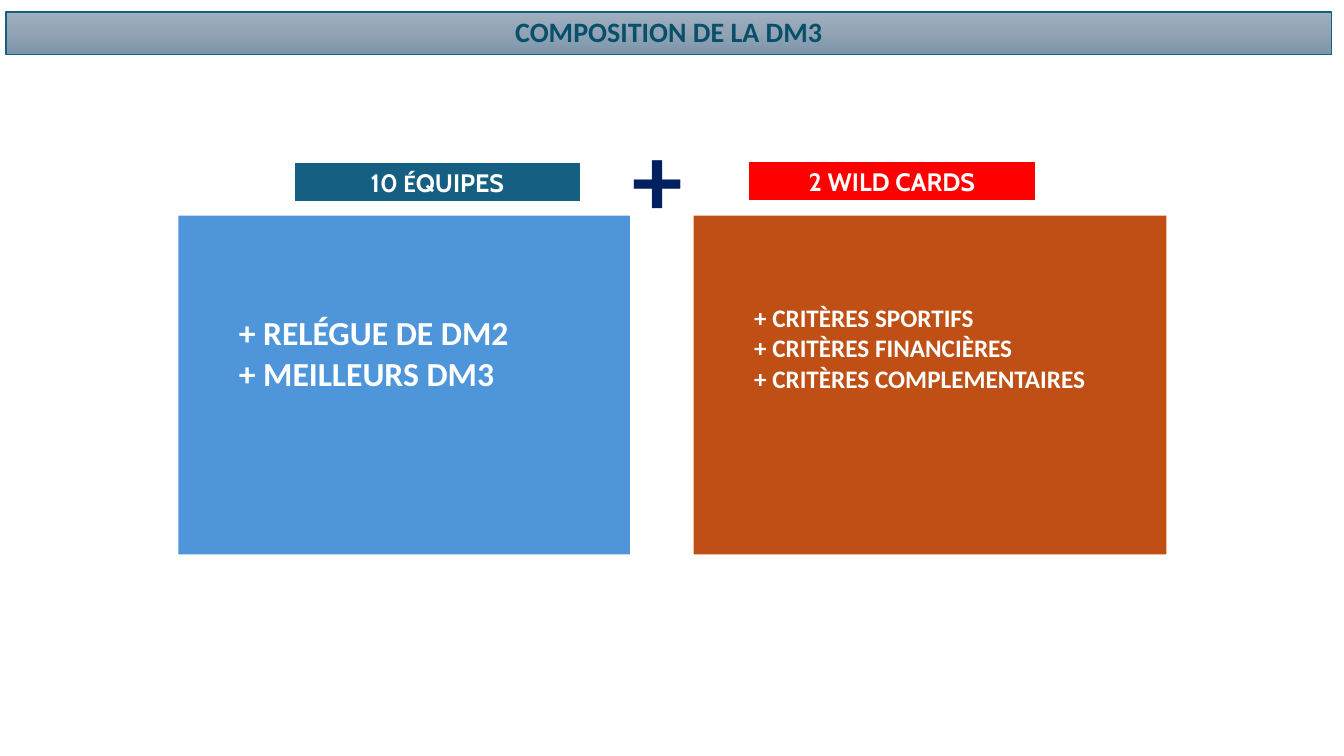
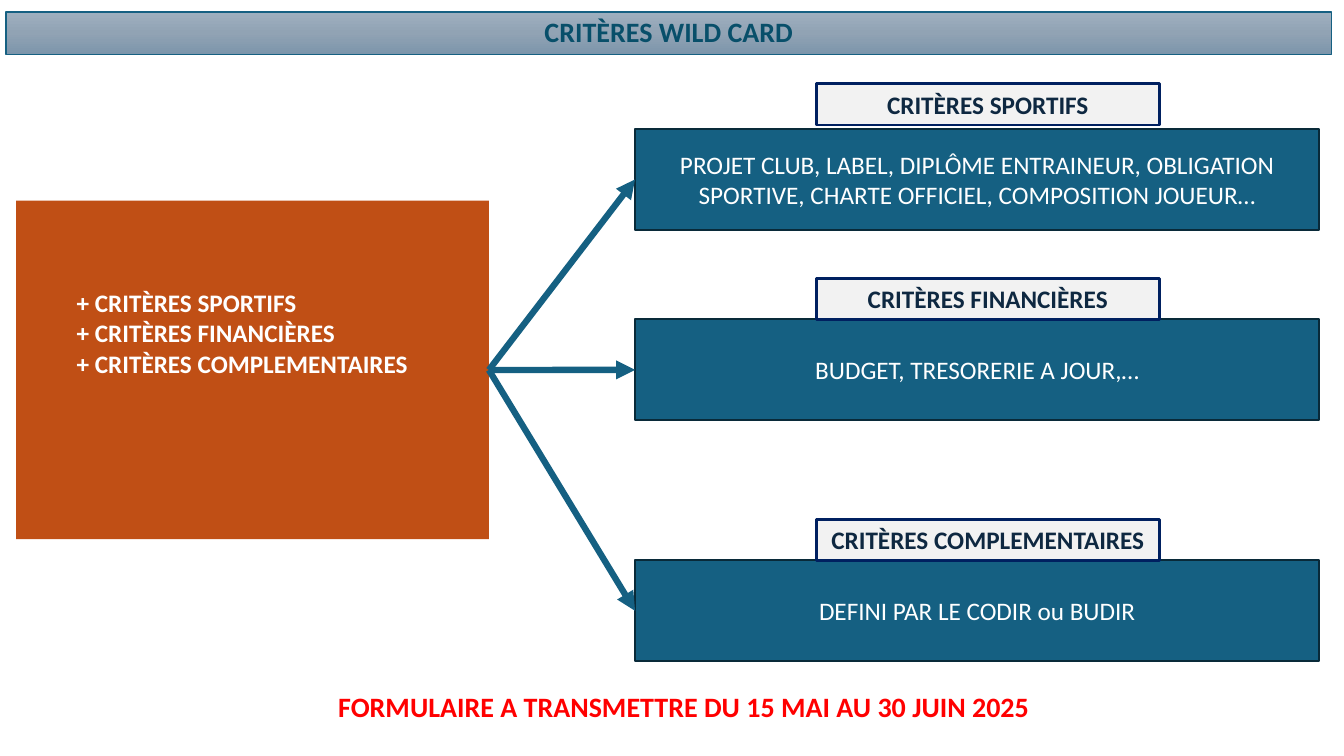
from copy import deepcopy
from dataclasses import dataclass

from lxml import etree
from pptx import Presentation
from pptx.dml.color import RGBColor
from pptx.enum import shapes, text
from pptx.oxml import ns
from pptx.util import Pt

COLORS = {
    "white": "FFFFFF",
    "teal": "156082",
    "teal_dark": "092A39",
    "title": "084F6A",
    "navy": "002060",
    "ink": "0E2841",
    "red": "FF0000",
    "blue": "4E95D9",
    "orange": "C04F15",
    "pale": "F2F2F2",
}
BAND_STOPS = ((0, "9EAFBF"), (0.5, "91A3B4"), (1, "7C95AB"))
CRITERIA = ("CRITÈRES SPORTIFS", "CRITÈRES FINANCIÈRES", "CRITÈRES COMPLEMENTAIRES")
CENTER = text.PP_ALIGN.CENTER
LEFT = text.PP_ALIGN.LEFT


@dataclass(frozen=True)
class Area:
    left: float
    top: float
    width: float
    height: float

    def lengths(self):
        return Pt(self.left), Pt(self.top), Pt(self.width), Pt(self.height)


@dataclass(frozen=True)
class Style:
    size: float = 18
    color: str = "white"
    bold: bool = True
    font: str = "Calibri"
    align: text.PP_ALIGN = CENTER
    spacing: float = 1.0


@dataclass(frozen=True)
class Look:
    fill: str
    line: str | None = None
    weight: float = 0


@dataclass(frozen=True)
class Label:
    area: Area
    look: Look
    spans: tuple[tuple[str, str], ...]


@dataclass(frozen=True)
class Criterion:
    heading: str
    detail: str
    heading_top: float
    detail_top: float


HEADLINE = Style(20, "title", spacing=0.9)
NOTICE = Style(20, "red", spacing=0.9)
PLUS = Style(72, "navy", align=LEFT, spacing=0.9)
HEADING = Style(color="ink")
DETAIL = Style(bold=False)

HEADING_LOOK = Look("pale", "navy", 2)
DETAIL_LOOK = Look("teal", "teal_dark", 1.5)

TEAM_LABELS = (
    Label(Area(209.5, 115.2, 205.9, 29.5), Look("teal", "white", 2),
          (("10 ", "Cabin"), ("É", "Calibri"), ("QUIPES", "Cabin"))),
    Label(Area(534.2, 114.5, 205.9, 29.5), Look("red", "white", 2),
          (("2 WILD CARDS", "Cabin"),)),
)
DETAILS = (
    Criterion(CRITERIA[0],
              "PROJET CLUB, LABEL, DIPLÔME ENTRAINEUR, OBLIGATION SPORTIVE, "
              "CHARTE OFFICIEL, COMPOSITION JOUEUR…", 59.8, 92.2),
    Criterion(CRITERIA[1], "BUDGET, TRESORERIE A JOUR,…", 198.7, 228.2),
    Criterion(CRITERIA[2], "DEFINI PAR LE CODIR ou BUDIR", 370.8, 400.3),
)


def rgb(name: str) -> RGBColor:
    return RGBColor.from_string(COLORS[name])


def add_span(para, words: str, style: Style, font: str | None = None) -> None:
    span = para.add_run()
    span.text = words
    span.font.name = font or style.font
    span.font.size = Pt(style.size)
    span.font.bold = style.bold
    span.font.color.rgb = rgb(style.color)


def format_para(para, style: Style) -> None:
    para.alignment = style.align
    para.line_spacing = style.spacing


def write(box, lines: tuple[str, ...], style: Style) -> None:
    frame = box.text_frame
    frame.word_wrap = True
    frame.auto_size = text.MSO_AUTO_SIZE.NONE
    frame.vertical_anchor = text.MSO_ANCHOR.MIDDLE
    for index, line in enumerate(lines):
        para = frame.add_paragraph() if index else frame.paragraphs[0]
        format_para(para, style)
        add_span(para, line, style)


def add_box(page, area: Area, look: Look):
    box = page.shapes.add_shape(shapes.MSO_SHAPE.RECTANGLE, *area.lengths())
    box.shadow.inherit = False
    box.fill.solid()
    box.fill.fore_color.rgb = rgb(look.fill)
    if look.line:
        box.line.color.rgb = rgb(look.line)
        box.line.width = Pt(look.weight)
    else:
        box.line.fill.background()
    return box


def add_label(page, label: Label) -> None:
    box = add_box(page, label.area, label.look)
    box.text_frame.vertical_anchor = text.MSO_ANCHOR.MIDDLE
    para = box.text_frame.paragraphs[0]
    style = Style()
    format_para(para, style)
    for words, font in label.spans:
        add_span(para, words, style, font)


def add_list(page, area: Area, fill: str, items: tuple[str, ...], size: float, inset: float):
    box = add_box(page, area, Look(fill))
    write(box, tuple(f"+ {item}" for item in items), Style(size, align=LEFT))
    box.text_frame.vertical_anchor = text.MSO_ANCHOR.TOP
    box.text_frame.margin_top = Pt(inset)
    box.text_frame.margin_left = Pt(43.2)
    return box


def add_criteria_list(page, left: float, top: float):
    return add_list(page, Area(left, top, 337.7, 241.9), "orange", CRITERIA, 18, 62)


def add_text(page, area: Area, words: str, style: Style) -> None:
    write(page.shapes.add_textbox(*area.lengths()), (words,), style)


def add_arrow(page, start, end) -> None:
    arrow = page.shapes.add_connector(shapes.MSO_CONNECTOR.STRAIGHT, 0, 0, 0, 0)
    arrow.begin_connect(start, 3)
    arrow.end_connect(end, 1)
    arrow.line.color.rgb = rgb("teal")
    arrow.line.width = Pt(4.5)
    etree.SubElement(arrow.line._get_or_add_ln(), ns.qn("a:tailEnd"), type="triangle")
    etree.SubElement(arrow._element.spPr, ns.qn("a:effectLst"))


def format_band(title) -> None:
    title.left, title.top, title.width, title.height = Area(4.3, 8.6, 946.8, 30.2).lengths()
    outline = etree.Element(ns.qn("a:prstGeom"), prst="roundRect")
    etree.SubElement(outline, ns.qn("a:avLst"))
    title._element.spPr.find(ns.qn("a:xfrm")).addnext(outline)
    title.fill.gradient()
    title.fill.gradient_angle = 270
    first = title._element.spPr.find(".//" + ns.qn("a:gs"))
    first.addnext(deepcopy(first))
    for stop, (position, color) in zip(title.fill.gradient_stops, BAND_STOPS):
        stop.position = position
        stop.color.rgb = RGBColor.from_string(color)
    title.line.color.rgb = rgb("teal")
    title.line.width = Pt(1)


def add_page(deck, headline: str):
    page = deck.slides.add_slide(deck.slide_layouts[5])
    title = page.shapes.title
    format_band(title)
    write(title, (headline,), HEADLINE)
    return page


def build_composition(deck) -> None:
    page = add_page(deck, "COMPOSITION DE LA DM3")
    for label in TEAM_LABELS:
        add_label(page, label)
    add_text(page, Area(445, 115.2, 25.2, 31.7), "+", PLUS)
    add_list(page, Area(127.4, 154.1, 322.6, 241.9), "blue",
             ("RELÉGUE DE DM2", "MEILLEURS DM3"), 24, 69)
    add_criteria_list(page, 495.4, 154.1)


def build_wild_card(deck) -> None:
    page = add_page(deck, "CRITÈRES WILD CARD")
    criteria = add_criteria_list(page, 11.5, 143.3)
    for item in DETAILS:
        detail = add_box(page, Area(453.6, item.detail_top, 488.9, 72), DETAIL_LOOK)
        write(detail, (item.detail,), DETAIL)
        heading = add_box(page, Area(583.2, item.heading_top, 244.8, 29.5), HEADING_LOOK)
        write(heading, (item.heading,), HEADING)
        add_arrow(page, criteria, detail)
    add_text(page, Area(47.5, 490.3, 882, 31.7),
             "FORMULAIRE A TRANSMETTRE DU 15 MAI AU 30 JUIN 2025", NOTICE)


def main() -> None:
    deck = Presentation()
    deck.slide_width, deck.slide_height = Pt(960), Pt(540)
    build_composition(deck)
    build_wild_card(deck)
    deck.save("out.pptx")


if __name__ == "__main__":
    main()
